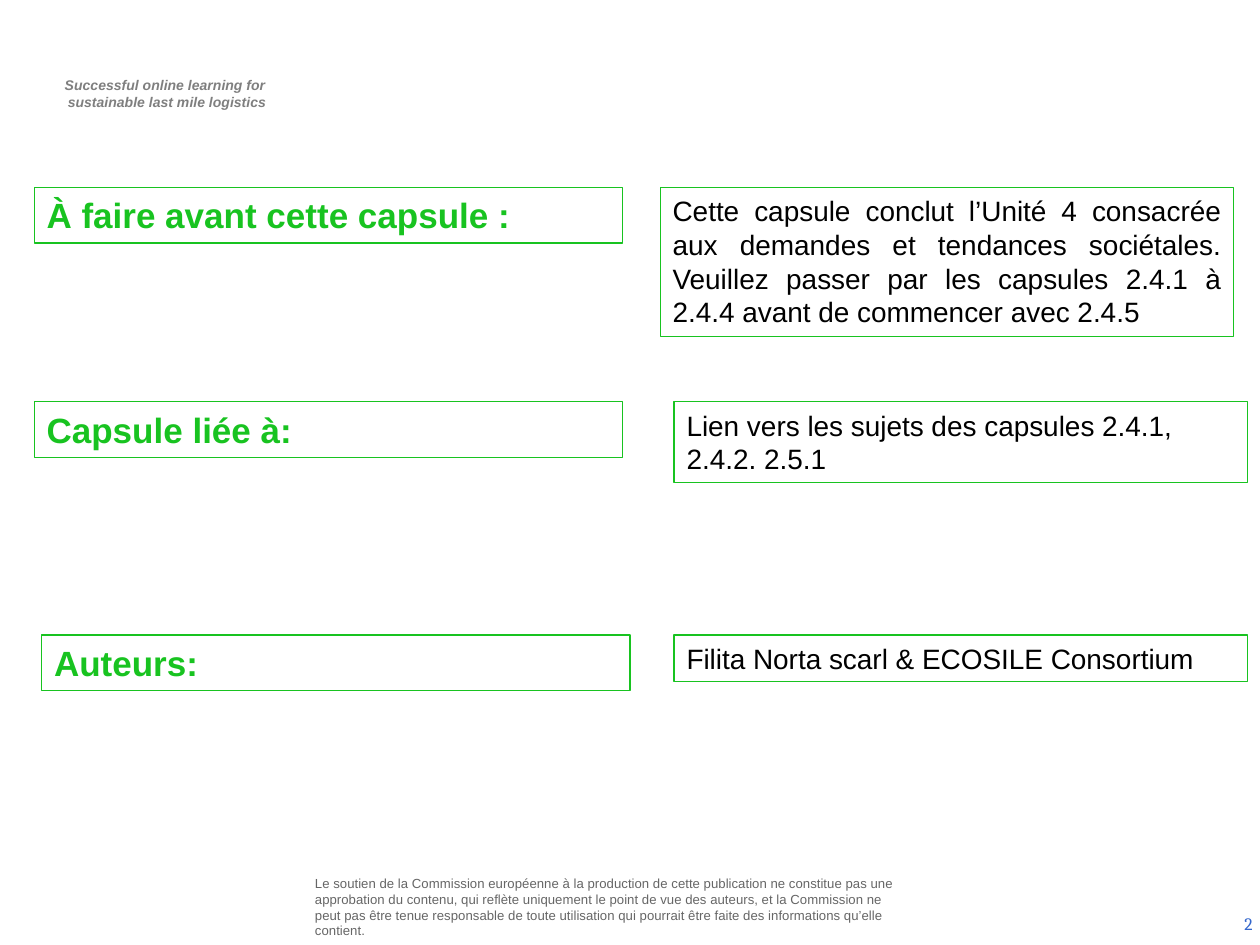
from dataclasses import dataclass

from pptx import Presentation
from pptx.dml.color import RGBColor
from pptx.enum.shapes import MSO_SHAPE
from pptx.enum.text import MSO_ANCHOR, MSO_AUTO_SIZE, PP_ALIGN
from pptx.shapes.autoshape import Shape
from pptx.slide import Slide
from pptx.util import Cm, Pt

RECT = MSO_SHAPE.RECTANGLE
TOP, MID = MSO_ANCHOR.TOP, MSO_ANCHOR.MIDDLE
LEFT, CENTER = PP_ALIGN.LEFT, PP_ALIGN.CENTER
RIGHT, JUST = PP_ALIGN.RIGHT, PP_ALIGN.JUSTIFY
GROW = MSO_AUTO_SIZE.SHAPE_TO_FIT_TEXT
FIXED = MSO_AUTO_SIZE.NONE

COLORS = {
    "green": "18C320",
    "white": "FFFFFF",
    "black": "000000",
    "gray": "7F7F7F",
    "dark": "666666",
    "blue": "3366CC",
}
LABEL_W, LABEL_H = 11.86, 1.12
BODY_W = 11.56


@dataclass
class Style:
    size: float
    color: str
    font: str = "Arial"
    bold: bool = False
    slant: bool = False
    align: PP_ALIGN = LEFT
    anchor: MSO_ANCHOR = TOP
    pad: tuple[float, float] = (0.25, 0.13)
    indent: float = 0
    fit: MSO_AUTO_SIZE = FIXED


@dataclass
class Note:
    text: str
    left: float
    top: float
    width: float
    height: float
    style: Style


@dataclass
class Row:
    top: float
    label: str
    label_x: float
    body: str
    body_x: float
    body_h: float
    align: PP_ALIGN = LEFT


NOTES = [
    Note("Successful online learning for \nsustainable last mile logistics",
         0.74, 1.42, 5.16, 0.94,
         Style(8, "gray", bold=True, slant=True, align=CENTER, indent=0.1,
               fit=GROW)),
    Note("Le soutien de la Commission européenne à la production de cette "
         "publication ne constitue pas une approbation du contenu, qui "
         "reflète uniquement le point de vue des auteurs, et la Commission "
         "ne peut pas être tenue responsable de toute utilisation qui "
         "pourrait être faite des informations qu’elle contient.",
         6.25, 17.65, 12.01, 1.27,
         Style(7.5, "dark", anchor=MID, pad=(0.1, 0.1))),
    Note("2", 19.58, 18.11, 5.92, 1.02,
         Style(10, "blue", font="Cambria", align=RIGHT, anchor=MID)),
]

ROWS = [
    Row(3.78, "À faire avant cette capsule :", 0.69,
        "Cette capsule conclut l’Unité 4 consacrée aux demandes et tendances "
        "sociétales. Veuillez passer par les capsules 2.4.1 à 2.4.4 avant de "
        "commencer avec 2.4.5", 13.31, 3.0, JUST),
    Row(8.1, "Capsule liée à:", 0.69,
        "Lien vers les sujets des capsules 2.4.1, 2.4.2. 2.5.1", 13.59, 1.63),
    Row(12.8, "Auteurs:", 0.84,
        "Filita Norta scarl & ECOSILE Consortium", 13.59, 0.94),
]


def paint(name: str) -> RGBColor:
    return RGBColor.from_string(COLORS[name])


def write(shape: Shape, text: str, style: Style) -> None:
    frame = shape.text_frame
    frame.text = text
    frame.word_wrap = True
    frame.auto_size = style.fit
    frame.vertical_anchor = style.anchor
    frame.margin_left = frame.margin_right = Cm(style.pad[0])
    frame.margin_top = frame.margin_bottom = Cm(style.pad[1])
    for para in frame.paragraphs:
        para.alignment = style.align
        if style.indent:
            para._p.get_or_add_pPr().set("marL", str(Cm(style.indent)))
        for run in para.runs:
            run.font.name = style.font
            run.font.size = Pt(style.size)
            run.font.bold = style.bold
            run.font.italic = style.slant
            run.font.color.rgb = paint(style.color)


def add_note(slide: Slide, note: Note) -> None:
    box = slide.shapes.add_textbox(
        Cm(note.left), Cm(note.top), Cm(note.width), Cm(note.height))
    write(box, note.text, note.style)


def add_panel(slide: Slide, note: Note) -> None:
    box = slide.shapes.add_shape(
        RECT, Cm(note.left), Cm(note.top), Cm(note.width), Cm(note.height))
    box.shadow.inherit = False
    box.fill.solid()
    box.fill.fore_color.rgb = paint("white")
    box.line.color.rgb = paint("green")
    box.line.width = Pt(0.75)
    write(box, note.text, note.style)


def add_row(slide: Slide, row: Row) -> None:
    head = Style(20, "green", bold=True, fit=GROW)
    body = Style(16, "black", align=row.align, fit=GROW)
    add_panel(slide, Note(row.label, row.label_x, row.top,
                          LABEL_W, LABEL_H, head))
    add_panel(slide, Note(row.body, row.body_x, row.top,
                          BODY_W, row.body_h, body))


def main() -> None:
    deck = Presentation()
    deck.slide_width, deck.slide_height = Cm(25.4), Cm(19.05)
    slide = deck.slides.add_slide(deck.slide_layouts[6])
    for note in NOTES:
        add_note(slide, note)
    for row in ROWS:
        add_row(slide, row)
    deck.save("out.pptx")


if __name__ == "__main__":
    main()
